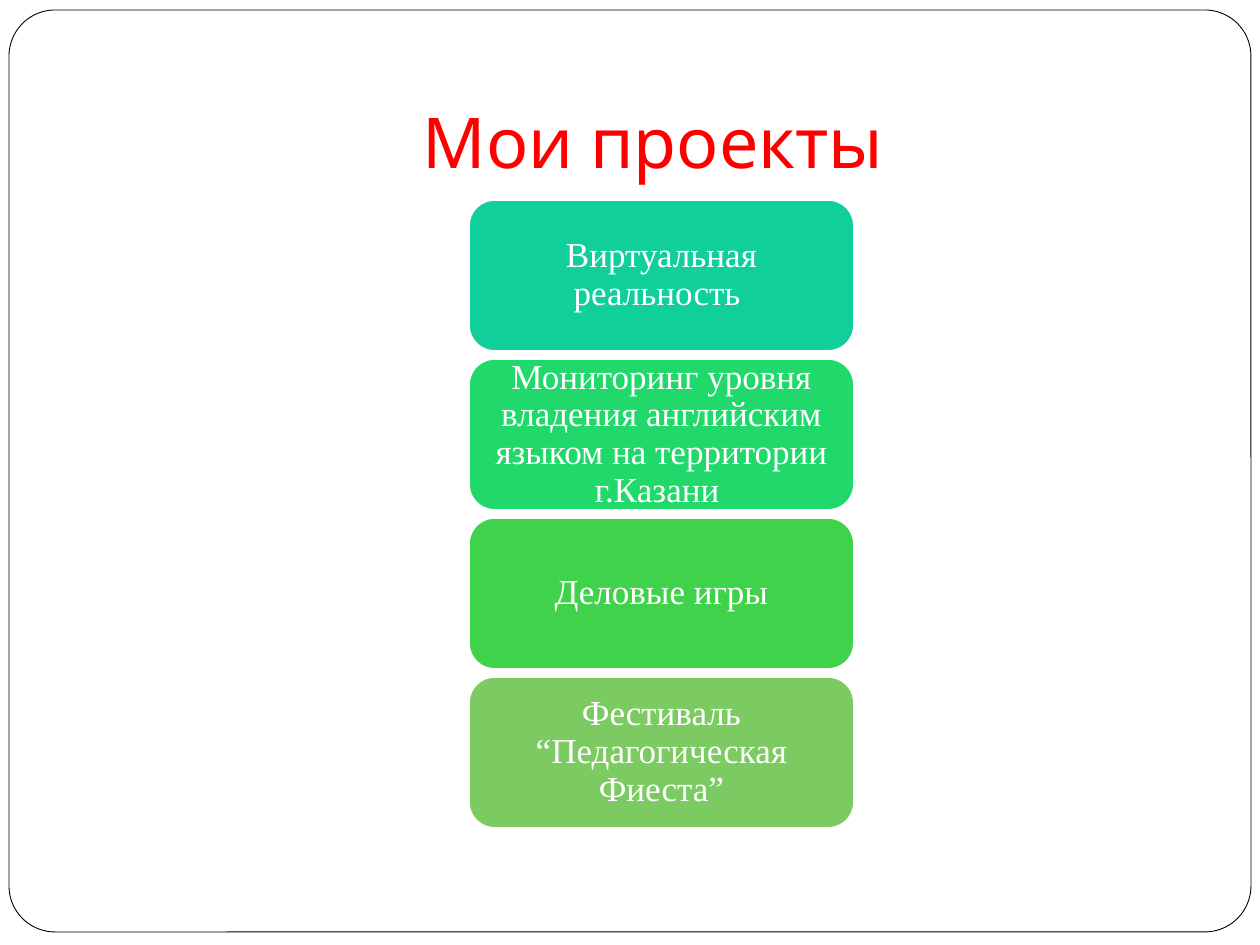
from dataclasses import dataclass

from pptx import Presentation
from pptx.dml.color import RGBColor
from pptx.enum.shapes import MSO_SHAPE
from pptx.enum.text import MSO_ANCHOR, PP_ALIGN
from pptx.util import Emu, Pt


@dataclass(frozen=True)
class Theme:
    """Colours, fonts and type sizes of the slide."""
    paper: str = "FFFFFF"
    frame_line: str = "000000"
    title_color: str = "FF0000"
    title_font: str = "Karla"
    title_size: int = 40
    card_font: str = "Times New Roman"
    card_size: int = 20


THEME = Theme()
PROJECTS = [
    ("Виртуальная реальность ", "10CF9B"),
    ("Мониторинг уровня владения английским языком на территории г.Казани ", "21D86A"),
    ("Деловые игры", "41D24C"),
    ("Фестиваль “Педагогическая Фиеста”", "7CCA62"),
]
CARD_LEFT, CARD_TOP, CARD_WIDTH, CARD_HEIGHT = 469, 200, 385, 151
CARD_PITCH = 159


def px(length):
    """Turn pixels into EMU."""
    return Emu(round(length * 914400 / 126))


def apply(target, values):
    """Set each attribute in a dict of format values."""
    for name, value in values.items():
        setattr(target, name, value)


def write_text(shape, text, margins, anchor, line_spacing, font):
    """Write one centred paragraph into a shape."""
    frame = shape.text_frame
    sides = ("margin_left", "margin_top", "margin_right", "margin_bottom")
    apply(frame, dict(zip(sides, map(px, margins))))
    apply(frame, {"word_wrap": True, "vertical_anchor": anchor})
    para = frame.paragraphs[0]
    apply(para, {"alignment": PP_ALIGN.CENTER, "line_spacing": line_spacing})
    span = para.add_run()
    span.text = text
    name, size, color = font
    apply(span.font, {"name": name, "size": Pt(size)})
    span.font.color.rgb = RGBColor.from_string(color)


def add_round_box(page, bounds, fill, line, width, corner):
    """Add a rounded rectangle with a flat fill and an outline."""
    box = page.shapes.add_shape(MSO_SHAPE.ROUNDED_RECTANGLE, *map(px, bounds))
    box.adjustments[0] = corner
    box.shadow.inherit = False
    box.fill.solid()
    box.fill.fore_color.rgb = RGBColor.from_string(fill)
    box.line.color.rgb = RGBColor.from_string(line)
    box.line.width = Pt(width)
    return box


def add_title(page, text):
    """Add the slide title."""
    box = page.shapes.add_textbox(*map(px, (126, 38, 1071, 157)))
    write_text(box, text, (13, 6, 13, 13), MSO_ANCHOR.BOTTOM, 1.0,
               (THEME.title_font, THEME.title_size, THEME.title_color))


def add_project_card(page, index, text, color):
    """Add one project card to the column."""
    bounds = (CARD_LEFT, CARD_TOP + index * CARD_PITCH, CARD_WIDTH, CARD_HEIGHT)
    card = add_round_box(page, bounds, color, THEME.paper, 1, 0.17)
    write_text(card, text, (10, 5, 10, 5), MSO_ANCHOR.MIDDLE, 0.9,
               (THEME.card_font, THEME.card_size, THEME.paper))


def main():
    """Build and save the slide."""
    deck = Presentation()
    apply(deck, {"slide_width": px(1260), "slide_height": px(945)})
    page = deck.slides.add_slide(deck.slide_layouts[6])
    add_round_box(page, (9, 10, 1242, 922), THEME.paper, THEME.frame_line, 0.5, 0.05)
    add_title(page, "Мои проекты ")
    for index, (text, color) in enumerate(PROJECTS):
        add_project_card(page, index, text, color)
    deck.save("out.pptx")


if __name__ == "__main__":
    main()
